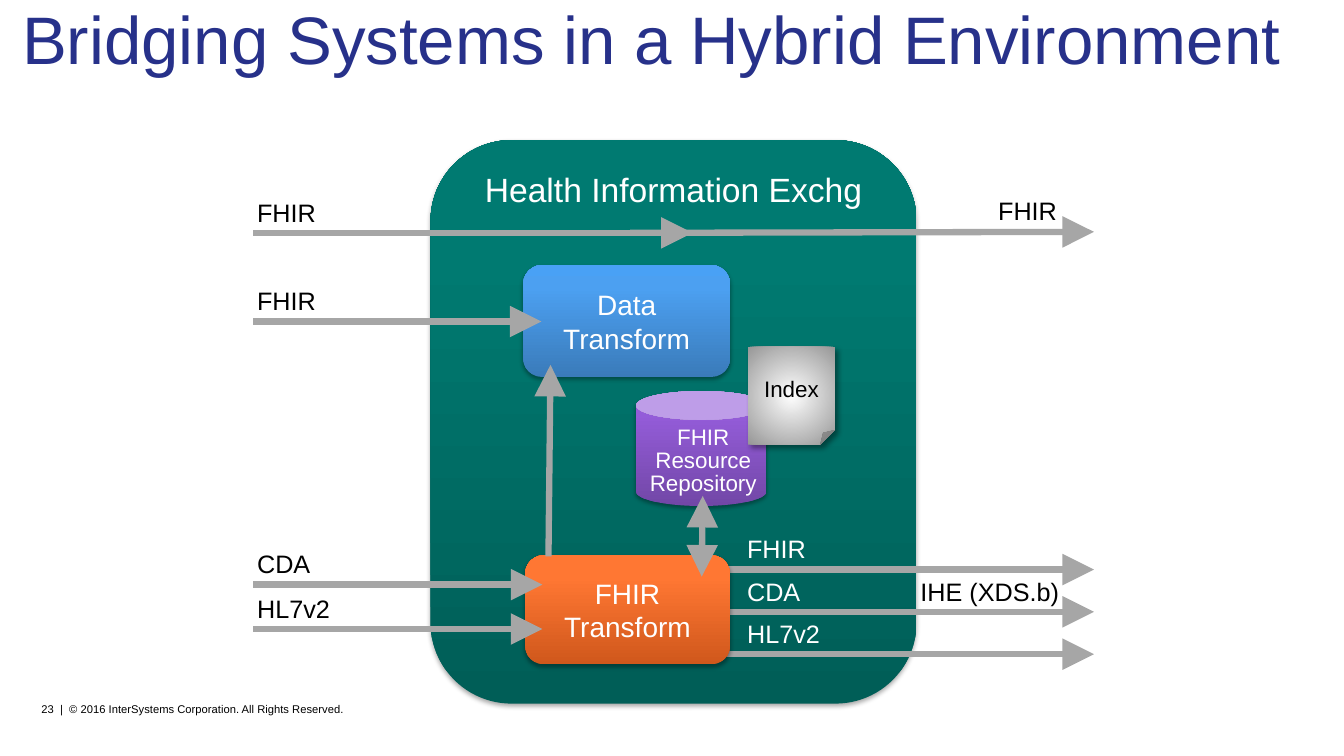
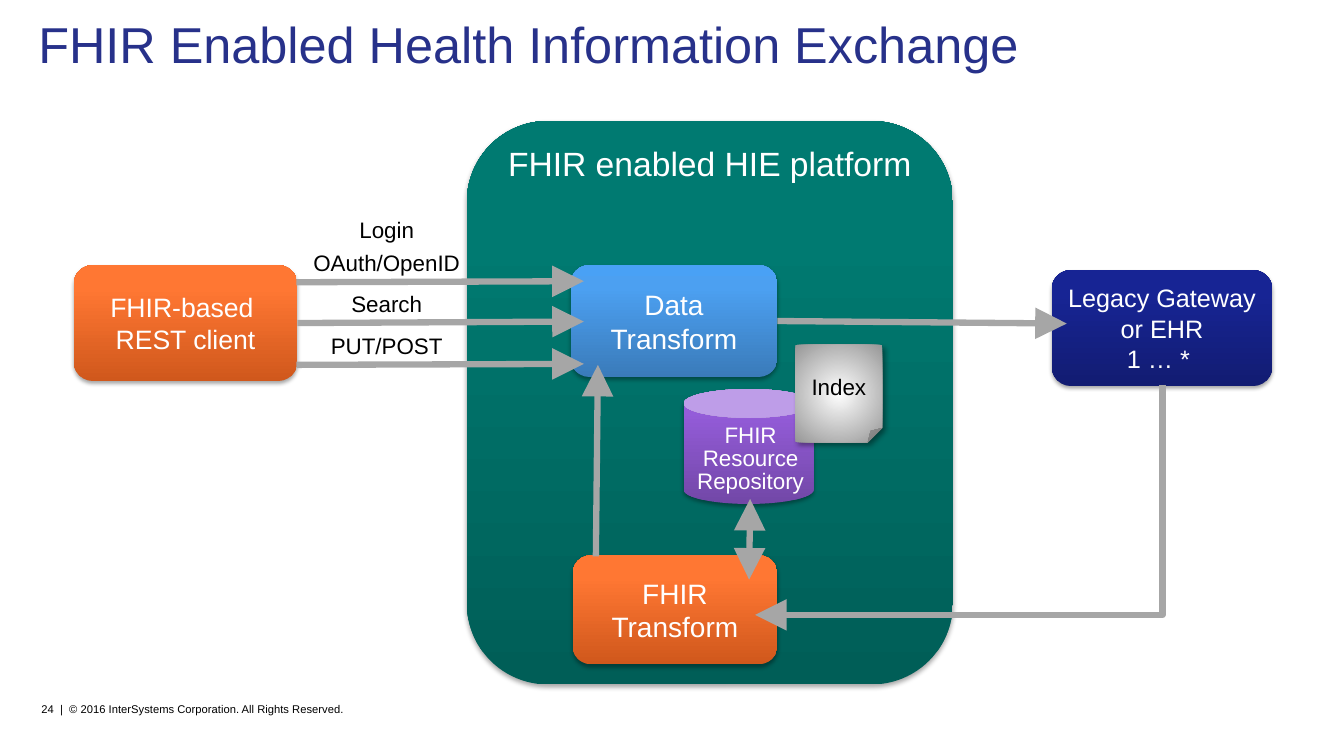
from dataclasses import dataclass

from lxml import etree
from pptx import Presentation
from pptx.dml.color import RGBColor
from pptx.enum import shapes, text
from pptx.oxml import parse_xml
from pptx.oxml.ns import nsdecls, qn
from pptx.util import Inches, Pt

SHAPE = shapes.MSO_SHAPE
CENTER = text.PP_ALIGN.CENTER
TOP, MIDDLE = text.MSO_ANCHOR.TOP, text.MSO_ANCHOR.MIDDLE
BOTTOM_TO_TOP = '<a:lin ang="16200000" scaled="0"/>'
FROM_CENTER = ('<a:path path="circle"><a:fillToRect l="50000" t="50000" '
               'r="50000" b="50000"/></a:path>')
RIGHT_SIDE = 3


@dataclass(frozen=True)
class Theme:
    font: str = "Arial"
    title: str = "27318A"
    white: str = "FFFFFF"
    black: str = "000000"
    arrow: str = "A6A6A6"
    # Gradient stops: position in percent and colour
    green: tuple = ((0, "005E57"), (80, "007A71"), (100, "007B72"))
    orange: tuple = ((0, "D0581C"), (80, "FF7733"), (100, "FF7835"))
    blue: tuple = ((0, "3A7BBA"), (80, "4CA0F1"), (100, "49A1F5"))
    purple: tuple = ((0, "7247A7"), (80, "945CD9"), (100, "945ADC"))
    navy: tuple = ((0, "121C72"), (80, "172494"), (100, "152297"))
    paper: tuple = ((0, "FFFFFF"), (100, "979797"))
    # Shadows: opacity in percent, blur and distance in points, angle
    soft_shadow: tuple = (35, 3.1, 1.8, 90)
    paper_shadow: tuple = (40, 4, 3, 45)
    panel_size: float = 24
    box_size: float = 20
    client_size: float = 19
    label_size: float = 18
    small_size: float = 16
    footer_size: float = 8
    arrow_width: float = 4.5


T = Theme()


def inches(values):
    return [Inches(v) for v in values]


def write(tf, lines, size, color, align=None, spacing=None, before=0):
    """Fill a text frame with one paragraph for each line."""
    tf.word_wrap = True
    for i, line in enumerate(lines):
        p = tf.add_paragraph() if i else tf.paragraphs[0]
        p.alignment = align
        p.line_spacing = spacing
        if i and before:
            p.space_before = Pt(before)
        r = p.add_run()
        r.text = line
        r.font.name = T.font
        r.font.size = Pt(size)
        r.font.color.rgb = RGBColor.from_string(color)


def set_margins(tf, left, top, right, bottom):
    tf.margin_left, tf.margin_top, tf.margin_right, tf.margin_bottom = inches(
        (left, top, right, bottom))


def add_gradient(sp, stops, direction):
    gs = "".join(f'<a:gs pos="{pos * 1000}"><a:srgbClr val="{color}"/></a:gs>'
                 for pos, color in stops)
    sp.fill.background()
    spPr = sp._element.spPr
    spPr.replace(spPr.find(qn("a:noFill")), parse_xml(
        f'<a:gradFill {nsdecls("a")} rotWithShape="1">'
        f'<a:gsLst>{gs}</a:gsLst>{direction}</a:gradFill>'))


def add_shadow(sp, opacity, blur, distance, angle):
    sp.shadow.inherit = False
    sp._element.spPr.find(qn("a:effectLst")).append(parse_xml(
        f'<a:outerShdw {nsdecls("a")} blurRad="{Pt(blur)}" dist="{Pt(distance)}" '
        f'dir="{angle * 60000}" rotWithShape="0"><a:srgbClr val="{T.black}">'
        f'<a:alpha val="{opacity * 1000}"/></a:srgbClr></a:outerShdw>'))


def add_block(slide, kind, at, stops, lines=(), size=T.box_size, color=T.white,
              anchor=MIDDLE, spacing=None, direction=BOTTOM_TO_TOP,
              shadow=T.soft_shadow):
    """Add a shaded shape with centred text."""
    sp = slide.shapes.add_shape(kind, *inches(at))
    add_gradient(sp, stops, direction)
    sp.line.fill.background()
    add_shadow(sp, *shadow)
    sp.text_frame.vertical_anchor = anchor
    write(sp.text_frame, lines, size, color, CENTER, spacing)
    return sp


def add_box(slide, at, stops, lines, **options):
    return add_block(slide, SHAPE.ROUNDED_RECTANGLE, at, stops, lines, **options)


def add_label(slide, at, *lines, size=T.label_size, color=T.black, align=None,
              anchor=TOP):
    tf = slide.shapes.add_textbox(*inches(at)).text_frame
    tf.vertical_anchor = anchor
    set_margins(tf, 0.05, 0.05, 0.05, 0.05)
    write(tf, lines, size, color, align, spacing=0.85, before=7)


def style_arrow(line, both_ends=False):
    line.line.color.rgb = RGBColor.from_string(T.arrow)
    line.line.width = Pt(T.arrow_width)
    ln = line.line._get_or_add_ln()
    for end in ("headEnd", "tailEnd") if both_ends else ("tailEnd",):
        etree.SubElement(ln, qn(f"a:{end}"), type="triangle", w="lg", len="lg")
    etree.SubElement(line._element.spPr, qn("a:effectLst"))


def add_arrow(slide, start, end, both_ends=False):
    line = slide.shapes.add_connector(
        shapes.MSO_CONNECTOR.STRAIGHT, *inches((*start, *end)))
    style_arrow(line, both_ends)
    return line


def add_down_left_arrow(slide, start, end):
    """Add an elbow arrow that goes down and then left."""
    (x1, y1), (x2, y2) = start, end
    mid_x, mid_y = (x1 + x2) / 2, (y1 + y2) / 2
    half_w, half_h = (y2 - y1) / 2, (x1 - x2) / 2
    line = slide.shapes.add_connector(
        shapes.MSO_CONNECTOR.ELBOW,
        *inches((mid_x - half_w, mid_y - half_h, mid_x + half_w, mid_y + half_h)))
    spPr = line._element.spPr
    spPr.find(qn("a:xfrm")).set("rot", str(90 * 60000))
    spPr.find(qn("a:prstGeom")).set("prst", "bentConnector2")
    style_arrow(line)


def add_slide(prs, number, title, at, size, anchor):
    slide = prs.slides.add_slide(prs.slide_layouts.get_by_name("Title Only"))
    sp = slide.shapes.title
    sp.left, sp.top, sp.width, sp.height = inches(at)
    tf = sp.text_frame
    tf.auto_size = text.MSO_AUTO_SIZE.NONE
    tf.vertical_anchor = anchor
    set_margins(tf, 0.05, 0.05, 0.05, 0)
    write(tf, [title], size, T.title, text.PP_ALIGN.LEFT, spacing=0.9)

    tf = slide.shapes.add_textbox(*inches((0.39, 6.95, 4.7, 0.18))).text_frame
    set_margins(tf, 0.02, 0.02, 0.02, 0.02)
    write(tf, [f"{number}  |  © 2016 InterSystems Corporation. All Rights Reserved."],
          T.footer_size, T.black)
    return slide


def add_panel(slide, left, top, title, spacing=None):
    add_box(slide, (left, top, 4.82, 5.59), T.green, [title],
            size=T.panel_size, anchor=TOP, spacing=spacing)


def add_core(slide, x, store_y, sync_y):
    """Add the transforms, repository and index; return the data transform."""
    add_box(slide, (x + 0.02, 5.51, 2.03, 1.08), T.orange, ["FHIR", "Transform"])
    data = add_box(slide, (x, 2.63, 2.05, 1.11), T.blue, ["Data", "Transform"])
    add_arrow(slide, (x + 0.25, 5.52), (x + 0.27, 3.62))
    add_block(slide, SHAPE.CAN, (x + 1.12, store_y, 1.29, 1.14), T.purple)
    tf = slide.shapes.add_textbox(
        *inches((x + 1.1, store_y + 0.3, 1.37, 1.07))).text_frame
    write(tf, ["FHIR Resource Repository"], T.small_size, T.white, CENTER, Pt(16.6))
    add_arrow(slide, (x + 1.78, sync_y), (x + 1.77, sync_y + 0.8), both_ends=True)
    add_block(slide, SHAPE.FOLDED_CORNER, (x + 2.23, store_y - 0.44, 0.86, 0.97),
              T.paper, ["Index"], size=T.small_size, color=T.black,
              direction=FROM_CENTER, shadow=T.paper_shadow)
    return data


def build_bridging(prs):
    slide = add_slide(prs, 23, "Bridging Systems in a Hybrid Environment",
                      (0.17, 0.01, 12.67, 1.16), 48, TOP)
    add_panel(slide, 4.27, 1.39, "Health Information Exchg")

    add_arrow(slide, (6.25, 2.31), (10.85, 2.3))
    add_label(slide, (9.85, 1.93, 1.29, 0.3), "FHIR")
    add_label(slide, (9.08, 5.71, 2.04, 0.34), "IHE (XDS.b)")
    for i, name in enumerate(("FHIR", "CDA", "HL7v2")):
        y = 5.65 + 0.42 * i
        add_arrow(slide, (7.21, y), (10.85, y))
        add_label(slide, (7.36, y - 0.36, 1.29, 0.3), name, color=T.white)

    add_core(slide, 5.19, 3.88, 4.92)

    for name, y, end_x in (("FHIR", 2.31, 6.87), ("FHIR", 3.19, 5.37),
                           ("CDA", 5.8, 5.38), ("HL7v2", 6.24, 5.38)):
        add_arrow(slide, (2.51, y), (end_x, y))
        add_label(slide, (2.5, y - 0.36, 1.29, 0.3), name)


def build_exchange(prs):
    slide = add_slide(prs, 24, "FHIR Enabled Health Information Exchange",
                      (0.33, -0.28, 12.83, 1.45), 36, MIDDLE)
    add_panel(slide, 4.63, 1.2, "FHIR enabled HIE platform", spacing=Pt(23.8))
    data = add_core(slide, 5.66, 3.86, 4.95)

    add_box(slide, (10.43, 2.68, 2.19, 1.15), T.navy,
            ["Legacy Gateway or EHR", "1 … * "], size=T.label_size)
    request = add_arrow(slide, (7.71, 3.21), (10.58, 3.21))
    request.begin_connect(data, RIGHT_SIDE)
    add_down_left_arrow(slide, (11.53, 3.82), (7.49, 6.1))

    client = add_box(slide, (0.73, 2.63, 2.22, 1.15), T.orange,
                     ["FHIR-based ", "REST client"], size=T.client_size)
    for lines, top, height, y in ((("Login", "OAuth/OpenID"), 2.3, 0.32, 2.8),
                                  (("Search",), 2.91, 0.25, 3.2),
                                  (("PUT/POST",), 3.28, 0.34, 3.62)):
        add_label(slide, (2.94, top, 1.79, height), *lines, size=T.small_size,
                  align=CENTER, anchor=MIDDLE)
        call = add_arrow(slide, (2.94, y), (5.79, y - 0.01))
        if lines == ("Search",):
            call.begin_connect(client, RIGHT_SIDE)


def main():
    prs = Presentation()
    prs.slide_width, prs.slide_height = inches((13.33, 7.5))
    build_bridging(prs)
    build_exchange(prs)
    prs.save("out.pptx")


if __name__ == "__main__":
    main()
